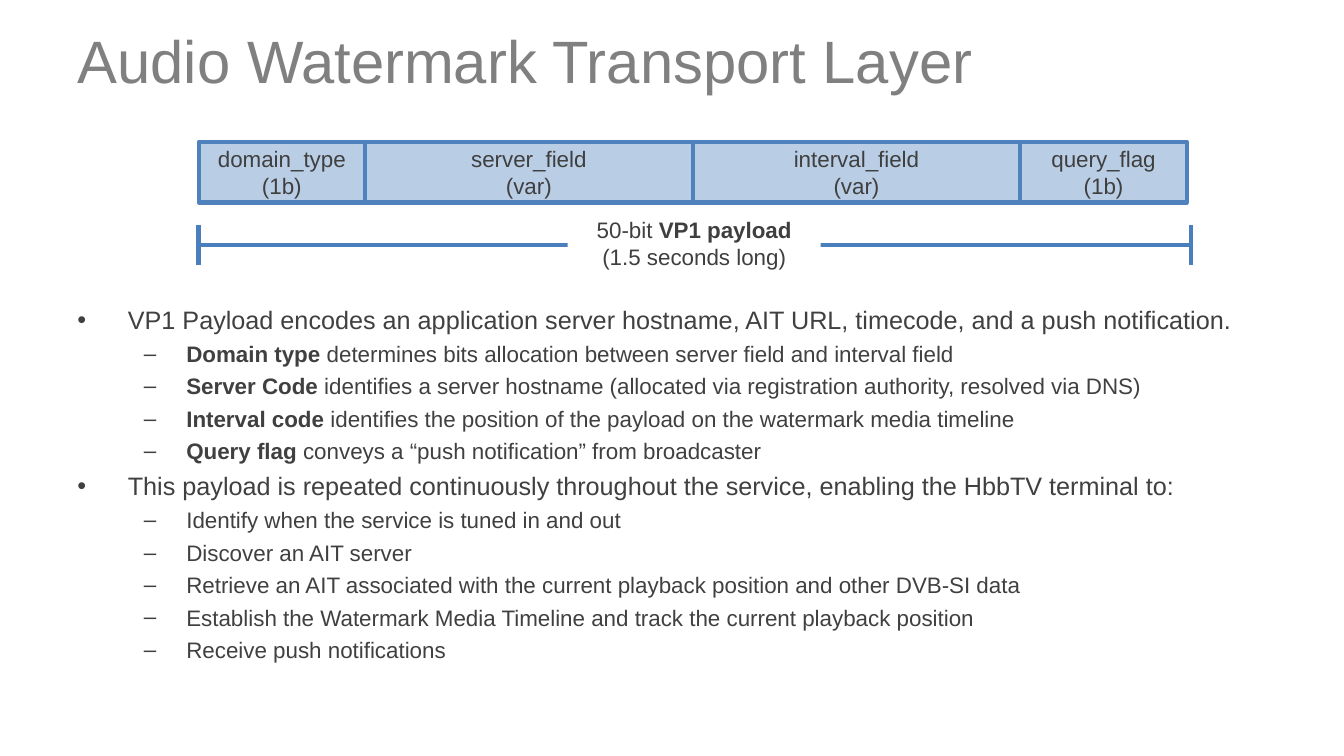
import pptx
import pptx.util
import pptx.dml.color
import pptx.enum.shapes
import pptx.enum.text
import lxml.etree
from dataclasses import dataclass

TITLE = "Audio Watermark Transport Layer"
FIELDS = [
    ("domain_type", "(1b)", 33),
    ("server_field", "(var)", 65),
    ("interval_field", "(var)", 65),
    ("query_flag", "(1b)", 33),
]
LABEL = [[("50-bit ", False), ("VP1 payload", True)], [("(1.5 seconds long)", False)]]
POINTS = [
    (0, "", "VP1 Payload encodes an application server hostname, AIT URL, timecode, and a push notification."),
    (1, "Domain type ", "determines bits allocation between server field and interval field"),
    (1, "Server Code ", "identifies a server hostname (allocated via registration authority, resolved via DNS)"),
    (1, "Interval code ", "identifies the position of the payload on the watermark media timeline"),
    (1, "Query flag ", "conveys a “push notification” from broadcaster"),
    (0, "", "This payload is repeated continuously throughout the service, enabling the HbbTV terminal to:"),
    (1, "", "Identify when the service is tuned in and out"),
    (1, "", "Discover an AIT server"),
    (1, "", "Retrieve an AIT associated with the current playback position and other DVB-SI data"),
    (1, "", "Establish the Watermark Media Timeline and track the current playback position"),
    (1, "", "Receive push notifications"),
]


@dataclass(frozen=True)
class Theme:
    font: str = "Arial"
    title: str = "808080"
    body: str = "404040"
    label: str = "3F3F3F"
    fill: str = "B9CDE5"
    edge: str = "4F81BD"
    rule: str = "4B7EBC"
    white: str = "FFFFFF"
    head: float = 42.7
    sizes: tuple = (18, 16)
    line: float = 3


LOOK = Theme()
CELL = 0.05
LEVELS = [("•", 10, -10), ("–", 21.6, -8.4)]
LEFT, TOP, HIGH = 39.4, 28.2, 12
RIGHT = 236.2
RULE, TICK = 48.6, 4
TAG = (112.6, 42, 50.2, 12.8)
HEAD = (13.4, -0.6, 208.2, 25)
BODY = (13.4, 59.4, 240, 74.6)
ALIGN = pptx.enum.text.PP_ALIGN
ANCHOR = pptx.enum.text.MSO_ANCHOR


def grid(*cells):
    return [pptx.util.Inches(n * CELL) for n in cells]


def tint(code):
    return pptx.dml.color.RGBColor.from_string(code)


def write(para, text, size, color, bold=False):
    run = para.add_run()
    run.text = text
    font = run.font
    font.name, font.size, font.bold = LOOK.font, pptx.util.Pt(size), bold
    font.color.rgb = tint(color)


def block(slide, spot, lines, fill, edge, anchor):
    shape = slide.shapes.add_shape(pptx.enum.shapes.MSO_SHAPE.RECTANGLE, *grid(*spot))
    shape.shadow.inherit = False
    shape.fill.solid()
    shape.fill.fore_color.rgb = tint(fill)
    if edge:
        shape.line.color.rgb = tint(edge)
        shape.line.width = pptx.util.Pt(LOOK.line)
    else:
        shape.line.fill.background()
    frame = shape.text_frame
    frame.word_wrap = True
    frame.vertical_anchor = anchor
    para = frame.paragraphs[0]
    para.alignment = ALIGN.CENTER
    for row, runs in enumerate(lines):
        if row:
            para.add_line_break()
        for text, bold in runs:
            write(para, text, LOOK.sizes[1], LOOK.label, bold)


def stroke(slide, *ends):
    link = slide.shapes.add_connector(pptx.enum.shapes.MSO_CONNECTOR.STRAIGHT, *grid(*ends))
    link.line.color.rgb = tint(LOOK.rule)
    link.line.width = pptx.util.Pt(LOOK.line)
    props = link._element.spPr
    lxml.etree.SubElement(props, pptx.oxml.ns.qn("a:effectLst"))


def bullet(para, level):
    mark, left, hang = LEVELS[level]
    props = para._p.get_or_add_pPr()
    margin, indent = grid(left, hang)
    props.set("marL", str(margin))
    props.set("indent", str(indent))
    font = lxml.etree.SubElement(props, pptx.oxml.ns.qn("a:buFont"))
    font.set("typeface", LOOK.font)
    char = lxml.etree.SubElement(props, pptx.oxml.ns.qn("a:buChar"))
    char.set("char", mark)
    para.level = level


def heading(slide):
    title = slide.shapes.title
    title.left, title.top, title.width, title.height = grid(*HEAD)
    frame = title.text_frame
    frame.vertical_anchor = ANCHOR.MIDDLE
    para = frame.paragraphs[0]
    para.alignment = ALIGN.LEFT
    write(para, TITLE, LOOK.head, LOOK.title)


def packet(slide):
    left = LEFT
    for name, bits, wide in FIELDS:
        lines = [[(name, False)], [(bits, False)]]
        block(slide, (left, TOP, wide, HIGH), lines, LOOK.fill, LOOK.edge, ANCHOR.MIDDLE)
        left += wide
    for side in (LEFT, RIGHT):
        stroke(slide, side, RULE - TICK, side, RULE + TICK)
    stroke(slide, LEFT, RULE, RIGHT, RULE)
    block(slide, TAG, LABEL, LOOK.white, None, ANCHOR.TOP)


def outline(slide):
    frame = slide.shapes.add_textbox(*grid(*BODY)).text_frame
    frame.word_wrap = True
    for row, (level, lead, text) in enumerate(POINTS):
        para = frame.add_paragraph() if row else frame.paragraphs[0]
        bullet(para, level)
        size = LOOK.sizes[level]
        if row:
            para.space_before = pptx.util.Pt(size / 4)
        if lead:
            write(para, lead, size, LOOK.body, True)
        write(para, text, size, LOOK.body)


def main():
    deck = pptx.Presentation()
    deck.slide_width = pptx.util.Inches(13.33)
    deck.slide_height = pptx.util.Inches(7.5)
    slide = deck.slides.add_slide(deck.slide_layouts[5])
    heading(slide)
    packet(slide)
    outline(slide)
    deck.save("out.pptx")


if __name__ == "__main__":
    main()
